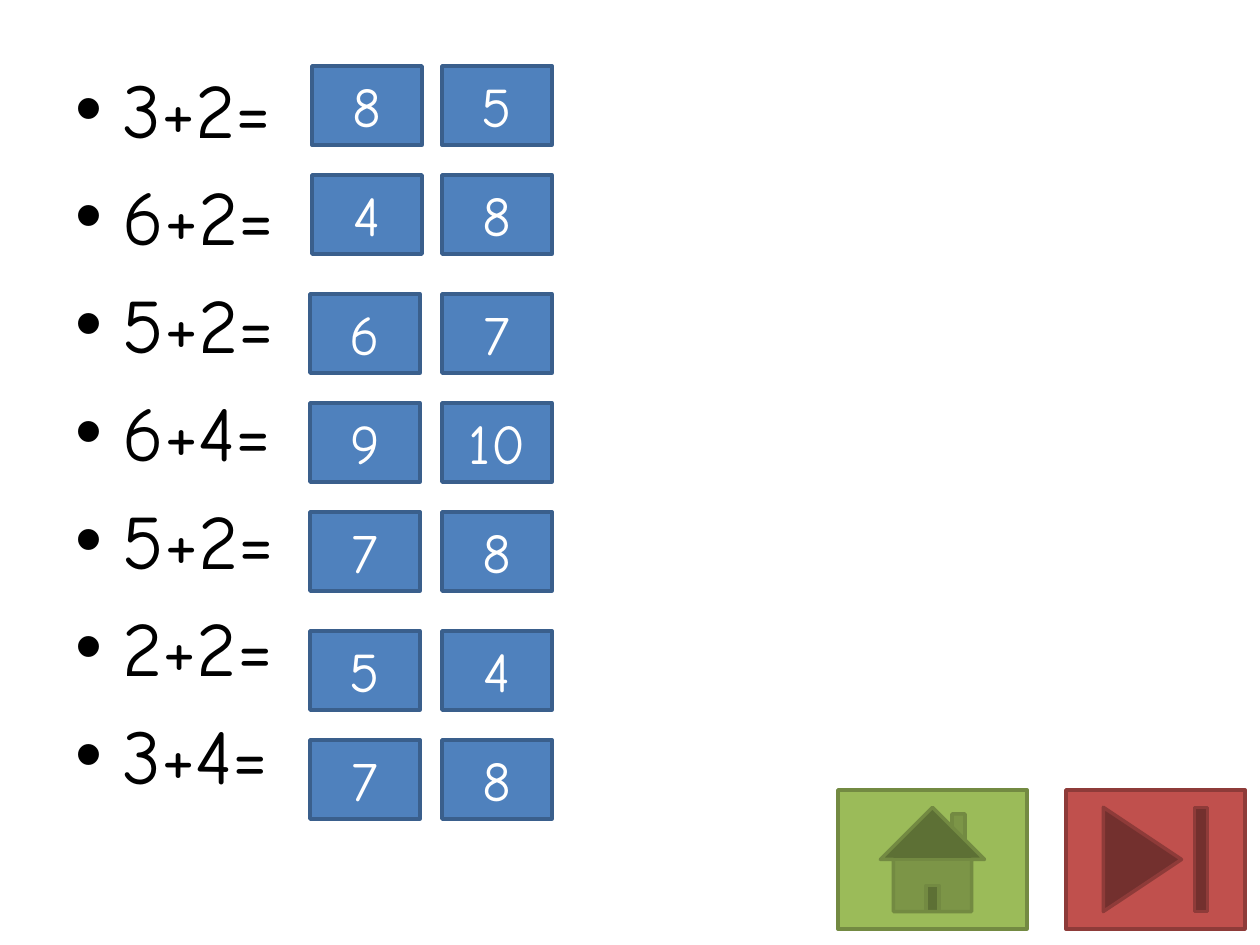
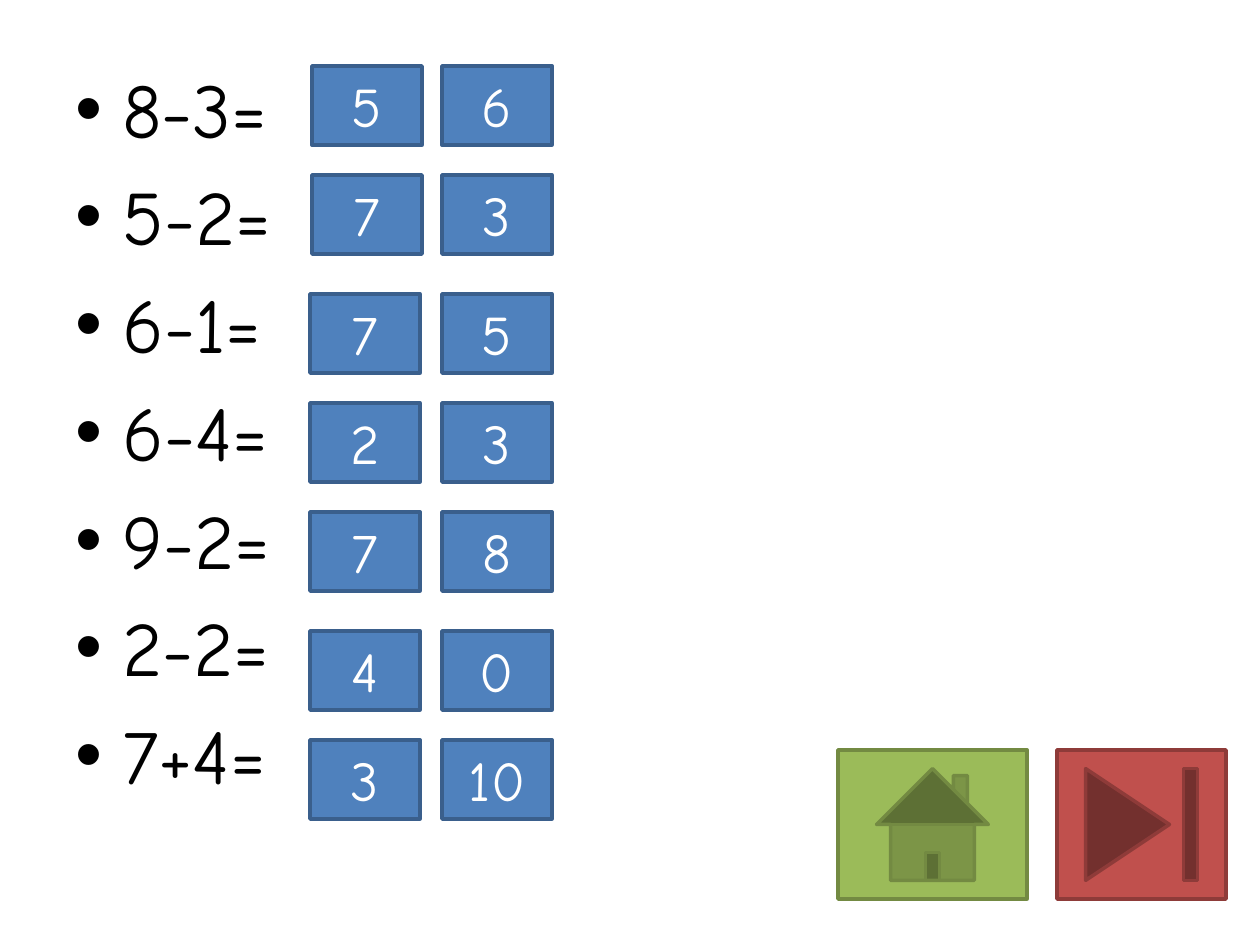
from lxml.etree import SubElement
from pptx import Presentation
from pptx.dml.color import RGBColor
from pptx.enum.shapes import MSO_SHAPE
from pptx.enum.text import MSO_ANCHOR, PP_ALIGN
from pptx.oxml.ns import qn
from pptx.util import Emu, Pt

# Each quiz: sums with their two answer choices, then the navigation buttons
QUIZZES = [
    {
        "sums": [
            ("3+2=", "8", "5"),
            ("6+2=", "4", "8"),
            ("5+2=", "6", "7"),
            ("6+4=", "9", "10"),
            ("5+2=", "7", "8"),
            ("2+2=", "5", "4"),
            ("3+4=", "7", "8"),
        ],
        "home": (838, 790, 189, 139),
        "end": (1066, 790, 179, 139),
    },
    {
        "sums": [
            ("8-3=", "5", "6"),
            ("5-2=", "7", "3"),
            ("6-1=", "7", "5"),
            ("6-4=", "2", "3"),
            ("9-2=", "7", "8"),
            ("2-2=", "4", "0"),
            ("7+4=", "3", "10"),
        ],
        "home": (838, 750, 189, 149),
        "end": (1057, 750, 169, 149),
    },
]

FONT = "Comic Neue"
BLACK, WHITE = "000000", "FFFFFF"
BLUE = ("4F81BD", "3A5F8C")
GREEN = ("9BBB59", "738A42")
RED = ("C0504D", "8E3B39")

PX_PER_INCH = 126
SUMS_BOX = (63, 55, 1134, 789)
BULLET_INDENT = 47
ANSWER_SIZE = (110, 79)
FIRST_TOP, ROW_PITCH = 66, 109
GROUP_GAP, GROUP_STARTS = 10, (2, 5)  # extra gap above these rows
SECOND_LEFT = 442


def px(length):
    return Emu(round(length * 914400 / PX_PER_INCH))


def rgb(color):
    return RGBColor.from_string(color)


def set_font(paragraph, size, color):
    paragraph.font.name = FONT
    paragraph.font.size = Pt(size)
    paragraph.font.color.rgb = rgb(color)


def add_bullet(paragraph, spaced):
    """Hanging bullet; spaced adds 20 % of a line above."""
    props = paragraph._p.get_or_add_pPr()
    props.set("marL", str(px(BULLET_INDENT)))
    props.set("indent", str(-px(BULLET_INDENT)))
    if spaced:
        before = SubElement(props, qn("a:spcBef"))
        SubElement(before, qn("a:spcPct"), val="20000")
    SubElement(props, qn("a:buFont"), typeface="Arial")
    SubElement(props, qn("a:buChar"), char="•")


def add_sums(slide, sums):
    frame = slide.shapes.add_textbox(*map(px, SUMS_BOX)).text_frame
    frame.word_wrap = True
    frame.text = "\n".join(question for question, *_ in sums)
    for row, paragraph in enumerate(frame.paragraphs):
        add_bullet(paragraph, spaced=row > 0)
        set_font(paragraph, 44, BLACK)


def add_tile(slide, kind, place, colors):
    tile = slide.shapes.add_shape(kind, *map(px, place))
    fill, line = colors
    tile.shadow.inherit = False
    tile.fill.solid()
    tile.fill.fore_color.rgb = rgb(fill)
    tile.line.color.rgb = rgb(line)
    tile.line.width = Pt(2)
    return tile


def add_answer(slide, answer, left, top):
    place = (left, top, *ANSWER_SIZE)
    frame = add_tile(slide, MSO_SHAPE.RECTANGLE, place, BLUE).text_frame
    frame.text = answer
    frame.vertical_anchor = MSO_ANCHOR.MIDDLE
    paragraph = frame.paragraphs[0]
    paragraph.alignment = PP_ALIGN.CENTER
    set_font(paragraph, 32, WHITE)


def row_top(row):
    gaps = sum(row >= start for start in GROUP_STARTS)
    return FIRST_TOP + row * ROW_PITCH + gaps * GROUP_GAP


def add_quiz(slide, quiz):
    add_sums(slide, quiz["sums"])
    for row, (_, first, second) in enumerate(quiz["sums"]):
        first_left = 312 if row < GROUP_STARTS[0] else 310
        add_answer(slide, first, first_left, row_top(row))
        add_answer(slide, second, SECOND_LEFT, row_top(row))
    add_tile(slide, MSO_SHAPE.ACTION_BUTTON_HOME, quiz["home"], GREEN)
    add_tile(slide, MSO_SHAPE.ACTION_BUTTON_END, quiz["end"], RED)


def main():
    deck = Presentation()
    deck.slide_width, deck.slide_height = px(1260), px(945)
    for quiz in QUIZZES:
        add_quiz(deck.slides.add_slide(deck.slide_layouts[6]), quiz)
    deck.save("out.pptx")


if __name__ == "__main__":
    main()
